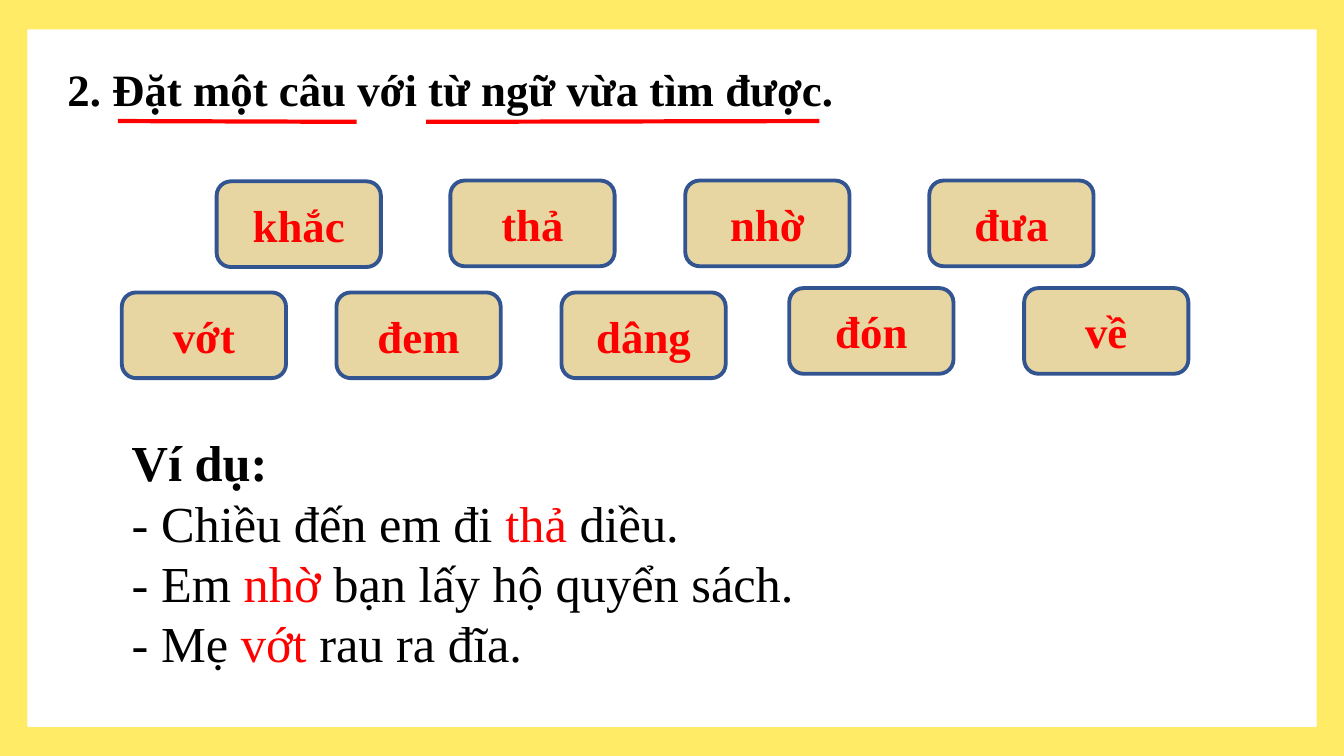
from dataclasses import dataclass

from lxml import etree
from pptx import Presentation
from pptx import util as u
from pptx.dml.color import RGBColor
from pptx.enum import shapes, text
from pptx.oxml.ns import qn


@dataclass(frozen=True)
class Theme:
    font: str = "Times New Roman"
    frame: str = "FFEB66"
    paper: str = "FFFFFF"
    ink: str = "000000"
    accent: str = "FF0000"
    card: str = "BF9000"
    card_opacity: int = 37
    card_line: str = "325491"
    heading_size: int = 32
    example_size: int = 36
    card_line_width: float = 2.75
    underline_width: float = 3


THEME = Theme()
SLIDE_WIDTH, SLIDE_HEIGHT = 33.87, 19.05
CARD_WIDTH, CARD_HEIGHT = 4.14, 2.16

# word, left, top in cm
WORD_CARDS = [
    ("khắc", 5.46, 4.57), ("thả", 11.35, 4.55),
    ("nhờ", 17.27, 4.55), ("đưa", 23.42, 4.55),
    ("vớt", 3.07, 7.37), ("đem", 8.48, 7.37), ("dâng", 14.15, 7.37),
    ("đón", 19.89, 7.26), ("về", 25.81, 7.26),
]
# before, highlighted word, after
EXAMPLES = [
    ("- Chiều đến em đi ", "thả ", "diều."),
    ("- Em ", "nhờ ", "bạn lấy hộ quyển sách."),
    ("- Mẹ ", "vớt ", "rau ra đĩa."),
]


def cm_box(*lengths):
    return [u.Cm(length) for length in lengths]


def add_run(paragraph, words, size, color, bold=False):
    run = paragraph.add_run()
    run.text = words
    run.font.name = THEME.font
    run.font.size = u.Pt(size)
    run.font.bold = bold
    run.font.color.rgb = RGBColor.from_string(color)


def add_filled_shape(slide, kind, box, color):
    shape = slide.shapes.add_shape(kind, *cm_box(*box))
    shape.shadow.inherit = False
    shape.fill.solid()
    shape.fill.fore_color.rgb = RGBColor.from_string(color)
    shape.line.fill.background()
    return shape


def add_text_frame(slide, box):
    text_frame = slide.shapes.add_textbox(*cm_box(*box)).text_frame
    text_frame.word_wrap = True
    return text_frame


def add_frame(slide, box, paper_box):
    rectangle = shapes.MSO_SHAPE.RECTANGLE
    add_filled_shape(slide, rectangle, box, THEME.frame)
    add_filled_shape(slide, rectangle, paper_box, THEME.paper)


def add_underline(slide, start, end):
    line = slide.shapes.add_connector(
        shapes.MSO_CONNECTOR.STRAIGHT, *cm_box(*start, *end))
    line.line.color.rgb = RGBColor.from_string(THEME.accent)
    line.line.width = u.Pt(THEME.underline_width)
    etree.SubElement(line._element.spPr, qn("a:effectLst"))


def add_heading(slide, box):
    """Place the task and underline its two key phrases."""
    left, top = box[:2]
    paragraph = add_text_frame(slide, box).paragraphs[0]
    add_run(paragraph, "2. Đặt một câu với từ ngữ vừa tìm được.",
            THEME.heading_size, THEME.ink, bold=True)
    add_underline(slide, (left + 1.52, top + 1.63), (left + 7.54, top + 1.65))
    add_underline(slide, (left + 9.29, top + 1.65), (left + 19.2, top + 1.63))


def add_word_card(slide, word, box):
    card = add_filled_shape(
        slide, shapes.MSO_SHAPE.ROUNDED_RECTANGLE, box, THEME.card)
    color = card._element.spPr.find(qn("a:solidFill")).find(qn("a:srgbClr"))
    alpha = etree.SubElement(color, qn("a:alpha"))
    alpha.set("val", str(THEME.card_opacity * 1000))
    card.line.color.rgb = RGBColor.from_string(THEME.card_line)
    card.line.width = u.Pt(THEME.card_line_width)
    card.text_frame.vertical_anchor = text.MSO_ANCHOR.MIDDLE
    paragraph = card.text_frame.paragraphs[0]
    paragraph.alignment = text.PP_ALIGN.CENTER
    add_run(paragraph, word, THEME.heading_size, THEME.accent, bold=True)


def add_examples(slide, box):
    text_frame = add_text_frame(slide, box)
    size = THEME.example_size
    add_run(text_frame.paragraphs[0], "Ví dụ:", size, THEME.ink, bold=True)
    for before, word, after in EXAMPLES:
        paragraph = text_frame.add_paragraph()
        add_run(paragraph, before, size, THEME.ink)
        add_run(paragraph, word, size, THEME.accent)
        add_run(paragraph, after, size, THEME.ink)


def main():
    presentation = Presentation()
    presentation.slide_width = u.Cm(SLIDE_WIDTH)
    presentation.slide_height = u.Cm(SLIDE_HEIGHT)
    slide = presentation.slides.add_slide(presentation.slide_layouts[6])
    add_frame(slide, (0, 0, SLIDE_WIDTH, SLIDE_HEIGHT),
              (0.69, 0.74, 32.49, 17.58))
    add_heading(slide, (1.45, 1.42, 31.42, 1.63))
    for word, left, top in WORD_CARDS:
        add_word_card(slide, word, (left, top, CARD_WIDTH, CARD_HEIGHT))
    add_examples(slide, (3.07, 10.74, 26.7, 7.95))
    presentation.save("out.pptx")


if __name__ == "__main__":
    main()
